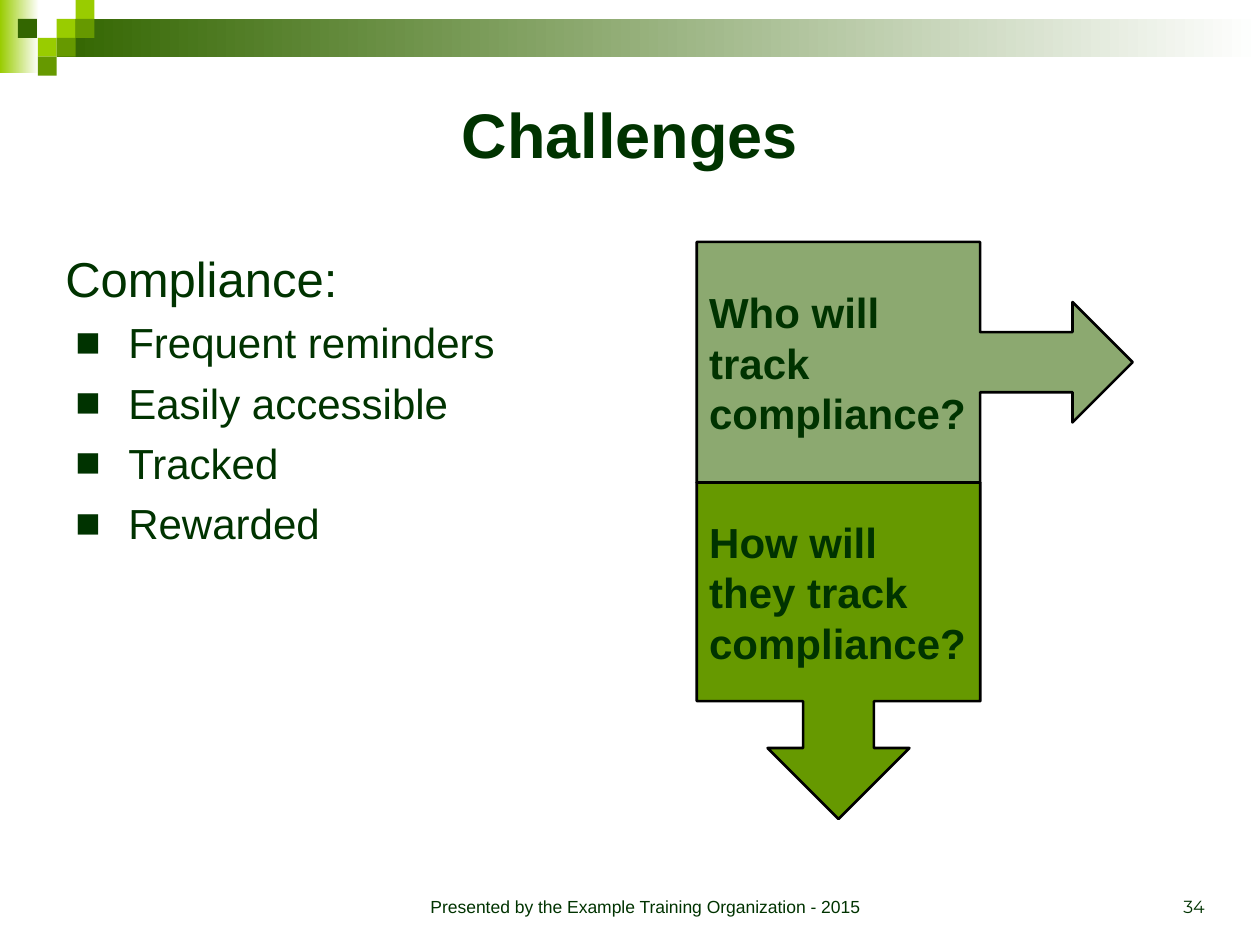
from dataclasses import dataclass

from lxml.etree import SubElement
from pptx import Presentation
from pptx.dml.color import RGBColor as Rgb
from pptx.enum.shapes import MSO_SHAPE as Preset
from pptx.enum.text import MSO_ANCHOR as Anchor, PP_ALIGN as Align
from pptx.oxml.ns import qn
from pptx.util import Inches, Pt

WIDTH, HEIGHT = 10, 7.5
TILE = 0.15


@dataclass(frozen=True)
class Theme:
    """Colours, fonts and type sizes of the slide."""
    ink: str = "003300"
    dark: str = "336600"
    mid: str = "669900"
    lime: str = "99CC00"
    paper: str = "FFFFFF"
    outline: str = "000000"
    font: str = "Arial"
    number_font: str = "Montserrat"
    title: int = 36
    lead: int = 28
    item: int = 24
    footer: int = 10


THEME = Theme()


def apply(target, values):
    """Set each named format value on the target."""
    for name, value in values.items():
        setattr(target, name, value)


def paint(fill, *colours):
    """Fill with one colour, or with a gradient from left to right."""
    if len(colours) == 1:
        fill.solid()
        fill.fore_color.rgb = Rgb.from_string(colours[0])
        return
    fill.gradient()
    fill.gradient_angle = 0
    for stop, colour in zip(fill.gradient_stops, colours):
        stop.color.rgb = Rgb.from_string(colour)


def add_preset(slide, preset, box, *colours):
    """Add an unlined, unshadowed preset shape."""
    shape = slide.shapes.add_shape(preset, *map(Inches, box))
    shape.shadow.inherit = False
    paint(shape.fill, *colours)
    shape.line.fill.background()
    return shape


def write(paragraph, words, size, bold=False, font=THEME.font, **layout):
    """Write one run into a paragraph."""
    apply(paragraph, {"alignment": Align.LEFT, **layout})
    run = paragraph.add_run()
    run.text = words
    apply(run.font, {"name": font, "size": Pt(size), "bold": bold})
    run.font.color.rgb = Rgb.from_string(THEME.ink)


def add_text(slide, box, anchor):
    """Add a wrapping text box and return its frame."""
    frame = slide.shapes.add_textbox(*map(Inches, box)).text_frame
    apply(frame, {"word_wrap": True, "vertical_anchor": anchor})
    return frame


def add_bullet(paragraph, mark="■"):
    """Give a paragraph a hanging square bullet."""
    props = paragraph._p.get_or_add_pPr()
    props.set("marL", str(Inches(0.5)))
    props.set("indent", str(Inches(-0.42)))
    colour = SubElement(props, qn("a:buClr"))
    SubElement(colour, qn("a:srgbClr")).set("val", THEME.ink)
    SubElement(props, qn("a:buFont")).set("typeface", THEME.font)
    SubElement(props, qn("a:buChar")).set("char", mark)


def add_banner(slide):
    """Draw the fading bands and the mosaic of tiles at the top."""
    add_preset(slide, Preset.RECTANGLE, (0, 0, 0.31, 0.58), THEME.lime, THEME.paper)
    add_preset(slide, Preset.RECTANGLE, (3 * TILE, TILE, WIDTH - 3 * TILE, 2 * TILE),
               THEME.dark, THEME.paper)
    mosaic = [(3, 1, THEME.lime), (4, 0, THEME.lime), (4, 1, THEME.mid),
              (2, 2, THEME.lime), (0.95, 1, THEME.dark), (3, 2, THEME.mid),
              (2, 3, THEME.mid)]
    for column, row, colour in mosaic:
        add_preset(slide, Preset.RECTANGLE,
                   (column * TILE, row * TILE, TILE, TILE), colour)


def add_body(slide, lead, items):
    """Write the lead line and its bulleted items."""
    frame = add_text(slide, (0.42, 1.92, 9, 4.58), Anchor.TOP)
    write(frame.paragraphs[0], lead, THEME.lead)
    for item in items:
        paragraph = frame.add_paragraph()
        write(paragraph, item, THEME.item, space_before=Pt(5.6))
        add_bullet(paragraph)


def add_callout(slide, preset, box, colour, question, opacity=100):
    """Add an outlined arrow callout that holds a question."""
    callout = add_preset(slide, preset, box, colour)
    for index, share in enumerate((0.25, 0.25, 0.25, 0.65)):
        callout.adjustments[index] = share
    paint(callout.line.fill, THEME.outline)
    callout.line.width = Pt(1.5)
    if opacity < 100:
        tint = callout._element.spPr.find(qn("a:solidFill"))[0]
        SubElement(tint, qn("a:alpha")).set("val", str(opacity * 1000))
    frame = callout.text_frame
    sides = ("left", "top", "right", "bottom")
    apply(frame, {f"margin_{side}": Inches(0.1) for side in sides})
    apply(frame, {"word_wrap": True, "vertical_anchor": Anchor.MIDDLE})
    write(frame.paragraphs[0], question, THEME.item, bold=True)


def main():
    """Build and save the slide."""
    deck = Presentation()
    apply(deck, {"slide_width": Inches(WIDTH), "slide_height": Inches(HEIGHT)})
    slide = deck.slides.add_slide(deck.slide_layouts[6])
    add_banner(slide)
    title = add_text(slide, (0.5, 0.5, 0.9 * WIDTH, 1.11), Anchor.MIDDLE)
    write(title.paragraphs[0], "Challenges", THEME.title, bold=True,
          alignment=Align.CENTER)
    add_body(slide, "Compliance:", ["Frequent reminders", "Easily accessible",
                                    "Tracked", "Rewarded"])
    credit = add_text(slide, (3.08, 6.83, 4.08, 0.5), Anchor.BOTTOM)
    write(credit.paragraphs[0], "Presented by the Example Training Organization - 2015",
          THEME.footer, alignment=Align.CENTER)
    number = add_text(slide, (7.33, 6.83, 2.33, 0.5), Anchor.BOTTOM)
    write(number.paragraphs[0], "34", THEME.footer, font=THEME.number_font,
          alignment=Align.RIGHT)
    left, top, depth = 5.53, 1.92, 1.91
    add_callout(slide, Preset.RIGHT_ARROW_CALLOUT, (left, top, 3.46, depth),
                THEME.dark, "Who will track compliance?", opacity=56)
    add_callout(slide, Preset.DOWN_ARROW_CALLOUT, (left, top + depth, 2.25, 2.67),
                THEME.mid, "How will they track compliance?")
    deck.save("out.pptx")


if __name__ == "__main__":
    main()
